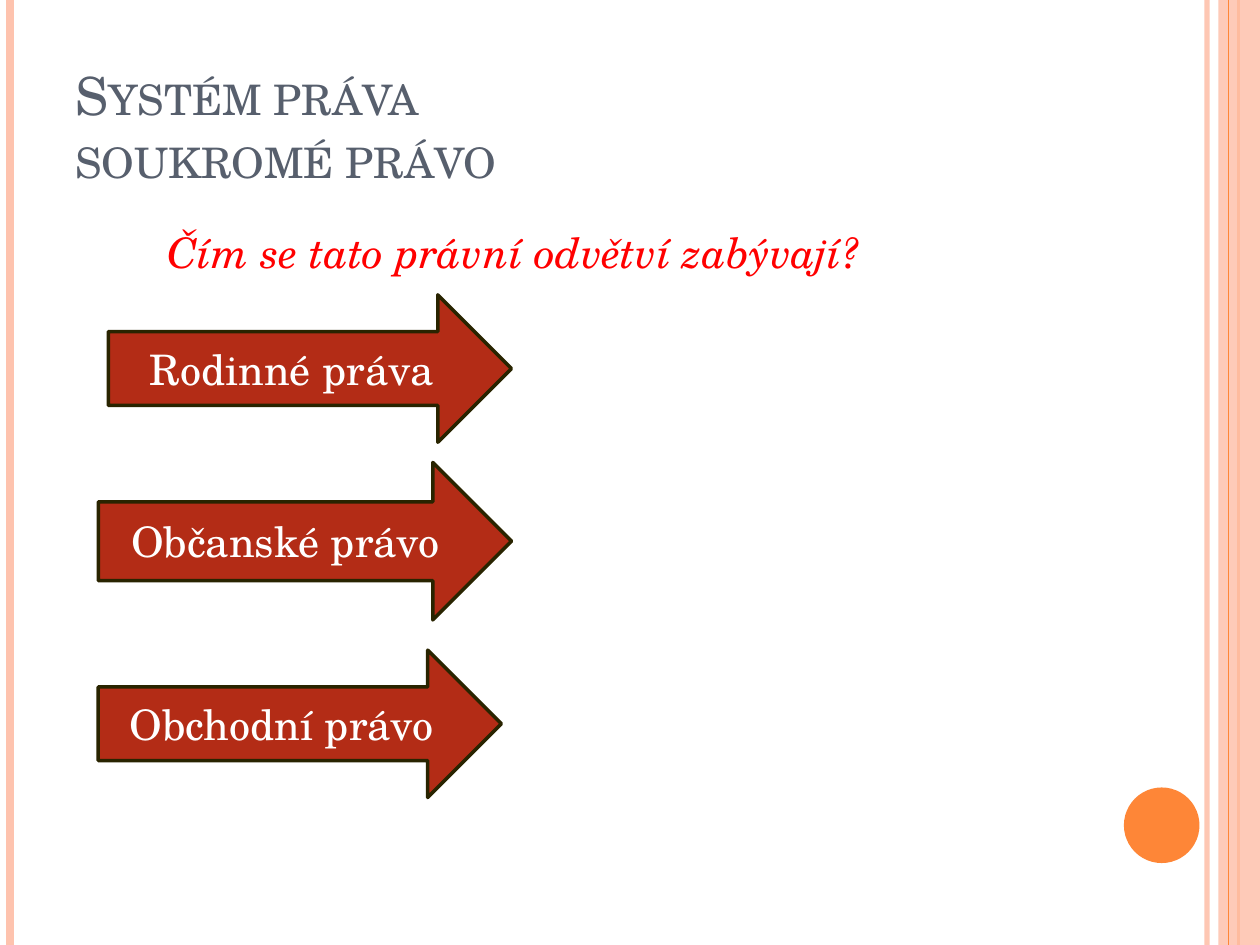
import pptx
import pptx.dml.color
import pptx.enum.shapes
import pptx.enum.text
import pptx.oxml.ns
import pptx.util
from lxml import etree

Inches, Pt = pptx.util.Inches, pptx.util.Pt
RGBColor = pptx.dml.color.RGBColor
SHAPE = pptx.enum.shapes.MSO_SHAPE
ANCHOR = pptx.enum.text.MSO_ANCHOR
qn = pptx.oxml.ns.qn

FONT = "TeX Gyre Schola"
PEACH = RGBColor(0xFE, 0xC3, 0xAE)
ORANGE = RGBColor(0xFE, 0x86, 0x37)
SLATE = RGBColor(0x57, 0x5F, 0x6D)
RED = RGBColor(0xFF, 0x00, 0x00)
BRICK = RGBColor(0xB3, 0x2C, 0x16)
DARK = RGBColor(0x29, 0x24, 0x00)
WHITE = RGBColor(0xFF, 0xFF, 0xFF)


def fade(shape, percent):
    """Make the first colour of the shape partly see-through."""
    color = next(shape._element.spPr.iter(qn("a:srgbClr")))
    etree.SubElement(color, qn("a:alpha"), val=str(percent * 1000))


def add_rule(slide, x, top, height, color, width):
    rule = slide.shapes.add_connector(
        pptx.enum.shapes.MSO_CONNECTOR.STRAIGHT,
        Inches(x), Inches(top), Inches(x), Inches(top + height))
    rule.line.color.rgb = color
    rule.line.width = Pt(width)
    etree.SubElement(rule._element.spPr, qn("a:effectLst"))
    return rule


def add_solid(slide, kind, box, color):
    shape = slide.shapes.add_shape(kind, *map(Inches, box))
    shape.shadow.inherit = False
    shape.fill.solid()
    shape.fill.fore_color.rgb = color
    shape.line.fill.background()
    return shape


def set_text(shape, text, size, color, anchor):
    frame = shape.text_frame
    frame.word_wrap = True
    frame.vertical_anchor = anchor
    para = frame.paragraphs[0]
    para.text = text
    para.font.name = FONT
    para.font.size = Pt(size)
    para.font.color.rgb = color
    return para


def add_label(slide, box, text, size, color, anchor):
    label = slide.shapes.add_textbox(*map(Inches, box))
    return set_text(label, text, size, color, anchor)


def add_frame(slide, left, top, width, height):
    """Draw the striped side edges and the dot of the theme."""
    right = left + width
    fade(add_rule(slide, right - 0.42, top, height, PEACH, 3), 93)
    add_rule(slide, left + 0.08, top, height, PEACH, 4.5)
    add_rule(slide, right - 0.17, top, height, ORANGE, 1.5)
    band = add_solid(slide, SHAPE.RECTANGLE,
                     (right - 0.33, top, 0.33, height), PEACH)
    fade(band, 87)
    add_rule(slide, right - 0.25, top, height, ORANGE, 0.75)
    add_solid(slide, SHAPE.OVAL,
              (right - 1.08, top + height - 1.25, 0.6, 0.6), ORANGE)


def add_title(slide, box):
    para = add_label(slide, box, "Systém práva\vsoukromé právo",
                     30, SLATE, ANCHOR.BOTTOM)
    for run in para.runs:
        run._r.get_or_add_rPr().set("cap", "small")


def add_question(slide, box):
    para = add_label(slide, box, "Čím se tato právní odvětví zabývají?",
                     24, RED, ANCHOR.TOP)
    para.font.italic = True


def add_arrow(slide, box, text):
    arrow = add_solid(slide, SHAPE.RIGHT_ARROW, box, BRICK)
    arrow.line.color.rgb = DARK
    arrow.line.width = Pt(2)
    para = set_text(arrow, text, 24, WHITE, ANCHOR.MIDDLE)
    para.alignment = pptx.enum.text.PP_ALIGN.CENTER


def main():
    deck = pptx.Presentation()
    deck.slide_width, deck.slide_height = Inches(10), Inches(7.5)
    slide = deck.slides.add_slide(deck.slide_layouts[6])
    add_frame(slide, 0, 0, 10, 7.5)
    add_title(slide, (0.5, 0.3, 8.17, 1.25))
    add_question(slide, (1.23, 1.75, 7.44, 0.5))
    arrows = [
        ("Rodinné práva", (0.86, 2.34, 3.2, 1.17)),
        ("Občanské právo", (0.78, 3.67, 3.28, 1.25)),
        ("Obchodní právo", (0.78, 5.16, 3.2, 1.17)),
    ]
    for text, box in arrows:
        add_arrow(slide, box, text)
    deck.save("out.pptx")


if __name__ == "__main__":
    main()
